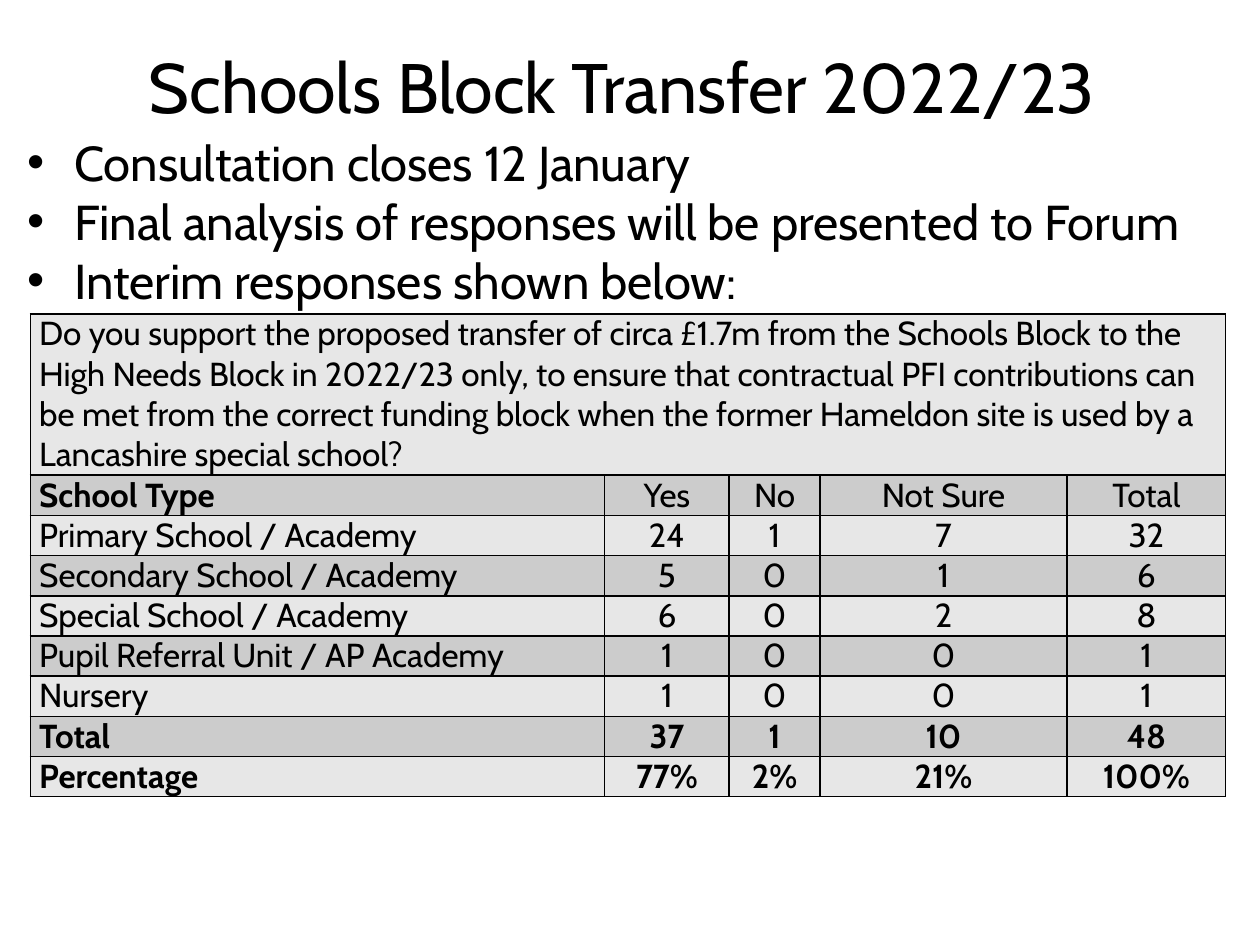
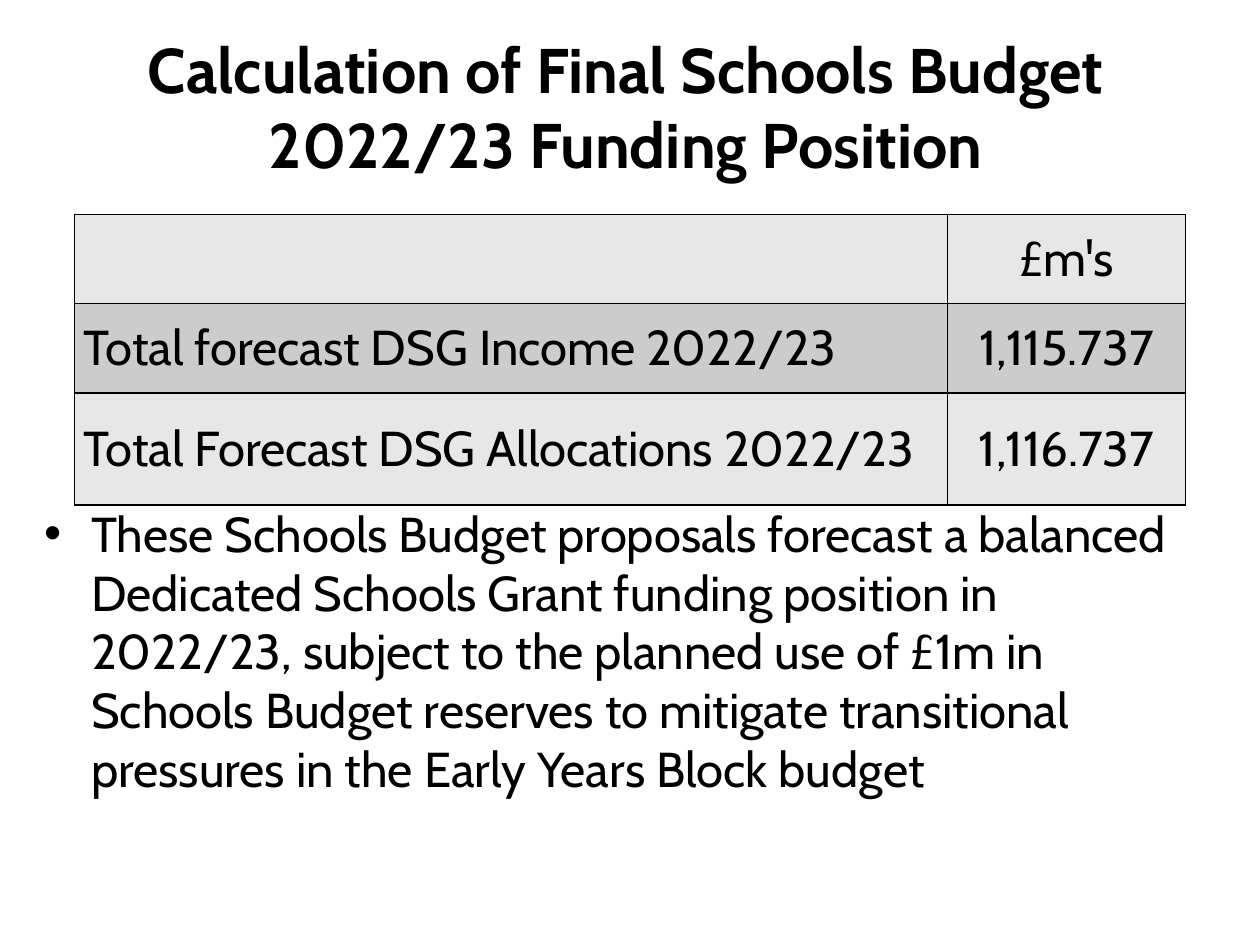
import pptx
import pptx.dml.color
import pptx.enum.text
import pptx.oxml.ns
import pptx.util
from lxml import etree

Cm = pptx.util.Cm
Pt = pptx.util.Pt
ALIGN = pptx.enum.text.PP_ALIGN
ANCHOR = pptx.enum.text.MSO_ANCHOR
qn = pptx.oxml.ns.qn

FONT = "Cabin"
INK = "000000"
BANDS = ["E7E7E7", "CCCCCC"]

TRANSFER = {
    "title": ["Schools Block Transfer 2022/23"],
    "title_box": (0.61, 0.53, 23.85, 2.39),
    "title_size": 40,
    "title_bold": False,
    "bullets": [
        "Consultation closes 12 January",
        "Final analysis of responses will be presented to Forum",
        "Interim responses shown below:",
    ],
    "bullet_box": (0.3, 2.55, 24.79, 3.8),
    "bullet_align": ALIGN.JUSTIFY,
    "table": [
        ["Do you support the proposed transfer of circa £1.7m from the Schools Block to the "
         "High Needs Block in 2022/23 only, to ensure that contractual PFI contributions can "
         "be met from the correct funding block when the former Hameldon site is used by a "
         "Lancashire special school?"],
        ["School Type", "Yes", "No", "Not Sure", "Total"],
        ["Primary School / Academy", "24", "1", "7", "32"],
        ["Secondary School / Academy", "5", "0", "1", "6"],
        ["Special School / Academy", "6", "0", "2", "8"],
        ["Pupil Referral Unit / AP Academy", "1", "0", "0", "1"],
        ["Nursery", "1", "0", "0", "1"],
        ["Total", "37", "1", "10", "48"],
        ["Percentage", "77%", "2%", "21%", "100%"],
    ],
    "table_at": (0.61, 6.33),
    "columns": [11.58, 2.51, 1.83, 4.98, 3.2],
    "rows": [3.25] + [0.81] * 8,
    "table_size": 19,
    "cell_anchor": ANCHOR.BOTTOM,
    "bold_labels": ["School Type"],
    "bold_rows": ["Total", "Percentage"],
}

POSITION = {
    "title": ["Calculation of Final Schools Budget", "2022/23 Funding Position"],
    "title_box": (0.69, 0.74, 23.85, 2.79),
    "title_size": 36,
    "title_bold": True,
    "bullets": [
        "These Schools Budget proposals forecast a balanced Dedicated Schools Grant funding "
        "position in 2022/23, subject to the planned use of £1m in Schools Budget reserves "
        "to mitigate transitional pressures in the Early Years Block budget",
    ],
    "bullet_box": (0.64, 10.02, 23.93, 6.2),
    "bullet_align": ALIGN.LEFT,
    "table": [
        ["", "£m's"],
        ["Total forecast DSG Income 2022/23", "1,115.737"],
        ["Total Forecast DSG Allocations 2022/23", "1,116.737"],
    ],
    "table_at": (1.5, 4.32),
    "columns": [17.6, 4.8],
    "rows": [1.8, 1.8, 2.26],
    "table_size": 28,
    "cell_anchor": ANCHOR.MIDDLE,
    "bold_labels": [],
    "bold_rows": [],
}


def colour(value):
    return pptx.dml.color.RGBColor.from_string(value)


def add_run(paragraph, words, size, bold=False):
    run = paragraph.add_run()
    run.text = words
    run.font.name = FONT
    run.font.size = Pt(size)
    run.font.bold = bold
    run.font.color.rgb = colour(INK)


def add_frame(slide, box, anchor):
    frame = slide.shapes.add_textbox(*map(Cm, box)).text_frame
    frame.word_wrap = True
    frame.vertical_anchor = anchor
    return frame


def add_title(slide, content):
    heading = add_frame(slide, content["title_box"], ANCHOR.MIDDLE).paragraphs[0]
    heading.alignment = ALIGN.CENTER
    for number, line in enumerate(content["title"]):
        if number:
            heading.add_line_break()
        add_run(heading, line, content["title_size"], content["title_bold"])


def add_bullets(slide, content):
    frame = add_frame(slide, content["bullet_box"], ANCHOR.TOP)
    for number, point in enumerate(content["bullets"]):
        paragraph = frame.add_paragraph() if number else frame.paragraphs[0]
        paragraph.alignment = content["bullet_align"]
        properties = paragraph._p.get_or_add_pPr()
        properties.set("marL", str(Cm(0.95)))
        properties.set("indent", str(-Cm(0.95)))
        etree.SubElement(properties, qn("a:buFont"), typeface="Arial")
        etree.SubElement(properties, qn("a:buChar"), char="•")
        add_run(paragraph, point, 28)


def add_borders(cell):
    properties = cell._tc.get_or_add_tcPr()
    for side in ("lnL", "lnR", "lnT", "lnB"):
        line = etree.SubElement(properties, qn("a:" + side), w=str(Pt(1)))
        fill = etree.SubElement(line, qn("a:solidFill"))
        etree.SubElement(fill, qn("a:srgbClr"), val=INK)


def add_grid(slide, content):
    widths, heights = content["columns"], content["rows"]
    size = (sum(widths), sum(heights))
    grid = slide.shapes.add_table(
        len(heights), len(widths), *map(Cm, content["table_at"] + size)).table
    grid.first_row = grid.horz_banding = False
    for column, width in zip(grid.columns, widths):
        column.width = Cm(width)
    for number, (row, height, entries) in enumerate(zip(grid.rows, heights, content["table"])):
        row.height = Cm(height)
        if len(entries) == 1:
            grid.cell(number, 0).merge(grid.cell(number, len(widths) - 1))
        for cell in row.cells:
            add_borders(cell)
            cell.fill.solid()
            cell.fill.fore_color.rgb = colour(BANDS[number % 2])
            cell.vertical_anchor = content["cell_anchor"]
            cell.margin_left = cell.margin_right = Cm(0.18)
            cell.margin_top = cell.margin_bottom = 0
        for place, entry in enumerate(entries):
            if entry:
                paragraph = grid.cell(number, place).text_frame.paragraphs[0]
                paragraph.alignment = ALIGN.CENTER if place else ALIGN.LEFT
                bold = entries[0] in content["bold_rows"] or entry in content["bold_labels"]
                add_run(paragraph, entry, content["table_size"], bold)


def main():
    deck = pptx.Presentation()
    deck.slide_width, deck.slide_height = Cm(25.4), Cm(19.05)
    for content in (TRANSFER, POSITION):
        slide = deck.slides.add_slide(deck.slide_layouts[6])
        add_title(slide, content)
        add_bullets(slide, content)
        add_grid(slide, content)
    deck.save("out.pptx")


if __name__ == "__main__":
    main()
